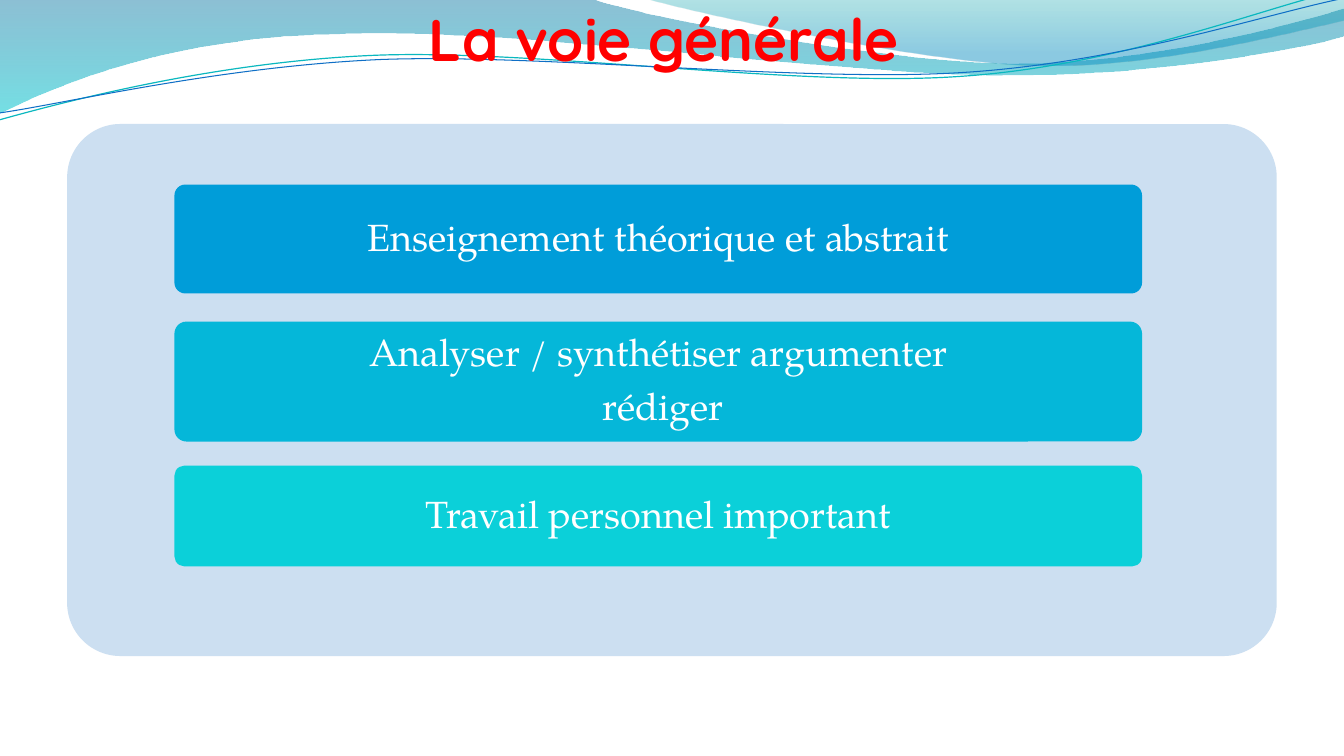
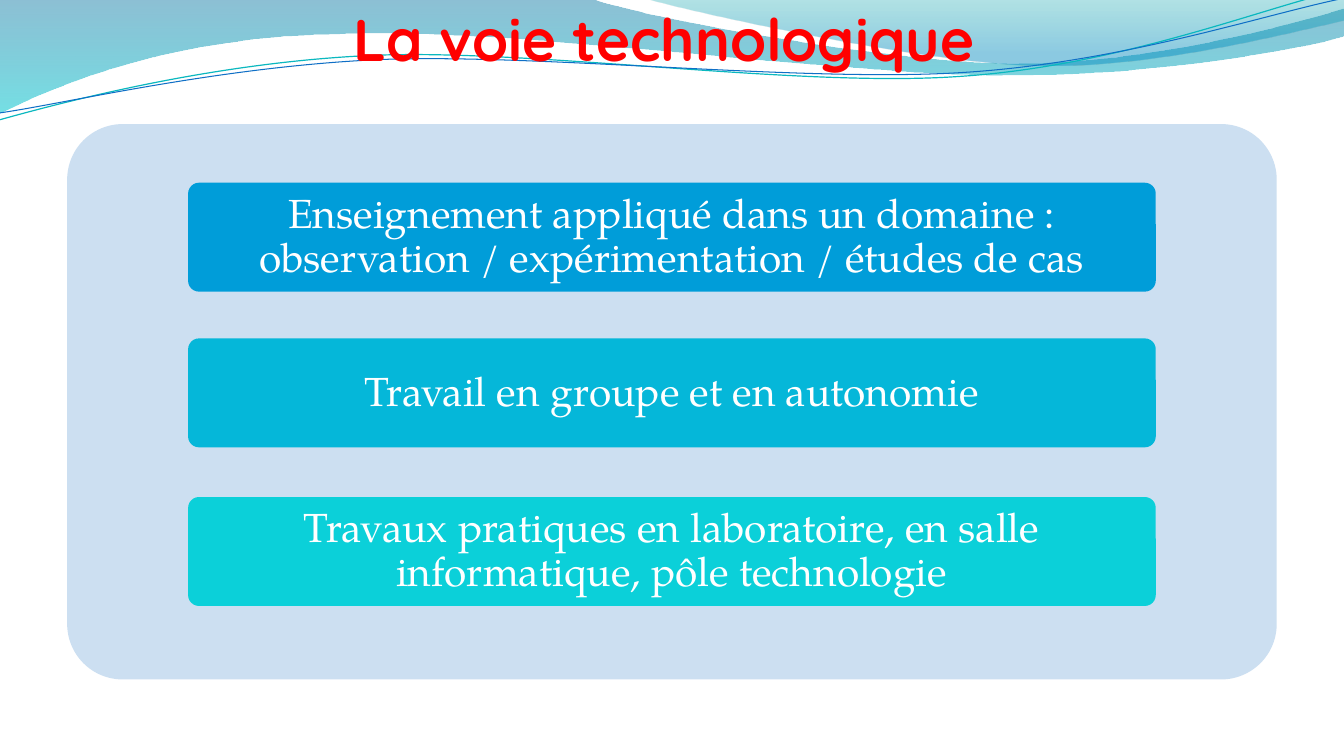
from pptx import Presentation
from pptx.dml.color import RGBColor
from pptx.enum.shapes import MSO_SHAPE
from pptx.enum.text import MSO_ANCHOR, MSO_AUTO_SIZE, PP_ALIGN
from pptx.oxml.ns import qn
from pptx.util import Pt
from lxml import etree

ROUNDED = MSO_SHAPE.ROUNDED_RECTANGLE
CENTER = PP_ALIGN.CENTER
MIDDLE, BOTTOM = MSO_ANCHOR.MIDDLE, MSO_ANCHOR.BOTTOM
GROW = MSO_AUTO_SIZE.SHAPE_TO_FIT_TEXT

SLIDE_W, SLIDE_H = 960, 540
TITLE_FONT, BODY_FONT = "Quicksand", "TeX Gyre Pagella"
COLORS = {
    "title": "FF0000", "text": "FFFFFF", "panel": "CCDFF1",
    "box1": "009DD9", "box2": "05B7D9", "box3": "0BD0D9",
    "wave_blue": "0074A1", "wave_cyan": "00C6CF",
    "crest_teal": "00A1A9", "crest_blue": "008BBF",
    "line_teal": "0AB8BF", "line_blue": "0F6FC6",
}
BOX_COLORS = ("box1", "box2", "box3")

# Header outlines: a pair is a straight segment, six numbers are a Bézier curve
WAVE = [(0, 0), (422.6, -0.7),
        (456.5, 12.2, 637.2, 45.4, 727.9, 45.4),
        (819.4, 45.4, 920.2, 18.7, 959.8, 6.5), (961.2, 25.9),
        (943.9, 31.7, 835.2, 54.7, 715.7, 54),
        (596.9, 54, 366.5, 20.2, 247, 24.5),
        (123.1, 25.9, 43.9, 59.8, -0.7, 81.4)]
CREST = [(460.1, -0.7),
         (488.9, 7.9, 654.5, 44.6, 738, 46.8),
         (821.5, 49.7, 923, 23, 959.8, 15.1), (959.8, 0)]
TEAL_LINE = [(-0.7, 85.7),
             (46.1, 72.7, 151.9, 44.6, 265.7, 39.6),
             (379.4, 34.6, 568.8, 62.6, 684, 54.7),
             (799.2, 47.5, 901.4, 5.8, 958.3, -7.2)]
BLUE_LINE = [(0, 80.6),
             (45.4, 74.2, 157, 47.5, 272.2, 42.5),
             (386.6, 38.2, 573.1, 59, 687.6, 51.8),
             (802.8, 44.6, 903.6, 10.1, 960.5, -1.4)]

# Each box: top, height, paragraphs
SLIDES = [
    {"title": "La voie générale ", "panel_h": 380, "left": 124.6,
     "size": 27, "inset": 5,
     "boxes": [
         (131.8, 77.8, ["Enseignement théorique et abstrait"]),
         (229.7, 85.7, [" Analyser / synthétiser argumenter ", " rédiger"]),
         (332.6, 72, ["Travail personnel important"])]},
    {"title": "La voie technologique ", "panel_h": 396.7, "left": 134.4,
     "size": 29, "inset": 5.6,
     "boxes": [
         (130.5, 77.8, ["Enseignement appliqué dans un domaine : "
                        "observation / expérimentation / études de cas"]),
         (241.7, 77.8, ["Travail en groupe et en autonomie"]),
         (355, 77.8, ["Travaux pratiques en laboratoire, en salle "
                      "informatique, pôle technologie"])]},
]


def rgb(name):
    return RGBColor.from_string(COLORS[name])


def add_outline(slide, outline, close):
    """Build a freeform on the end points, then bend its curved segments."""
    ends = [(Pt(seg[-2]), Pt(seg[-1])) for seg in outline]
    builder = slide.shapes.build_freeform(*ends[0])
    builder.add_line_segments(ends[1:], close=close)
    sp = builder.convert_to_shape()
    sp.shadow.inherit = False
    segments = list(sp.element.spPr.iter(qn("a:lnTo")))
    for line, seg in zip(segments, outline[1:]):
        if len(seg) == 2:
            continue
        curve = etree.Element(qn("a:cubicBezTo"))
        for x, y in (seg[:2], seg[2:4]):
            pt = etree.SubElement(curve, qn("a:pt"))
            pt.set("x", str(Pt(x) - sp.left))
            pt.set("y", str(Pt(y) - sp.top))
        curve.append(line[0])
        line.getparent().replace(line, curve)
    return sp


def add_wave(slide, outline, stops):
    """Add a translucent area; stops are (position, colour, opacity %)."""
    sp = add_outline(slide, outline, True)
    sp.line.fill.background()
    sp.fill.gradient()
    sp.fill.gradient_angle = 270
    for stop, (position, color, _) in zip(sp.fill.gradient_stops, stops):
        stop.position = position
        stop.color.rgb = rgb(color)
    for clr, (_, _, opacity) in zip(sp.element.spPr.iter(qn("a:srgbClr")), stops):
        etree.SubElement(clr, qn("a:alpha")).set("val", str(opacity * 1000))


def add_curve(slide, outline, color, width):
    sp = add_outline(slide, outline, False)
    sp.fill.background()
    sp.line.color.rgb = rgb(color)
    sp.line.width = Pt(width)


def add_header(slide):
    add_wave(slide, WAVE, [(0, "wave_blue", 45), (1, "wave_cyan", 55)])
    add_wave(slide, CREST, [(0, "crest_teal", 30), (0.8, "crest_blue", 45)])
    add_curve(slide, TEAL_LINE, "line_teal", 0.85)
    add_curve(slide, BLUE_LINE, "line_blue", 0.75)


def style_paragraph(p, font, size, color, spacing, bold=False):
    p.alignment = CENTER
    p.line_spacing = spacing
    for r in p.runs:
        r.font.name = font
        r.font.size = Pt(size)
        r.font.bold = bold
        r.font.color.rgb = rgb(color)


def add_title(slide, text):
    tf = slide.shapes.add_textbox(0, Pt(9.4), Pt(SLIDE_W), Pt(46)).text_frame
    tf.word_wrap = True
    tf.auto_size = GROW
    tf.vertical_anchor = BOTTOM
    tf.text = text
    style_paragraph(tf.paragraphs[0], TITLE_FONT, 42, "title", 0.76, True)


def add_rounded(slide, left, top, width, height, color):
    sp = slide.shapes.add_shape(ROUNDED, Pt(left), Pt(top), Pt(width), Pt(height))
    sp.adjustments[0] = 0.1
    sp.shadow.inherit = False
    sp.fill.solid()
    sp.fill.fore_color.rgb = rgb(color)
    sp.line.fill.background()
    return sp


def add_box(slide, left, top, height, color, lines, size, inset):
    tf = add_rounded(slide, left, top, 691.2, height, color).text_frame
    tf.word_wrap = True
    tf.vertical_anchor = MIDDLE
    tf.margin_left = tf.margin_right = Pt(inset)
    tf.margin_top = tf.margin_bottom = Pt(4.5)
    tf.text = "\n".join(lines)
    for p in tf.paragraphs:
        p.space_after = Pt(round(0.35 * size, 1))
        style_paragraph(p, BODY_FONT, size, "text", 0.9)


def main():
    prs = Presentation()
    prs.slide_width, prs.slide_height = Pt(SLIDE_W), Pt(SLIDE_H)
    for content in SLIDES:
        slide = prs.slides.add_slide(prs.slide_layouts[6])
        add_header(slide)
        # Panel and its three boxes
        add_rounded(slide, 48, 88.6, 864, content["panel_h"], "panel")
        for color, (top, height, lines) in zip(BOX_COLORS, content["boxes"]):
            add_box(slide, content["left"], top, height, color, lines,
                    content["size"], content["inset"])
        add_title(slide, content["title"])
    prs.save("out.pptx")


if __name__ == "__main__":
    main()
